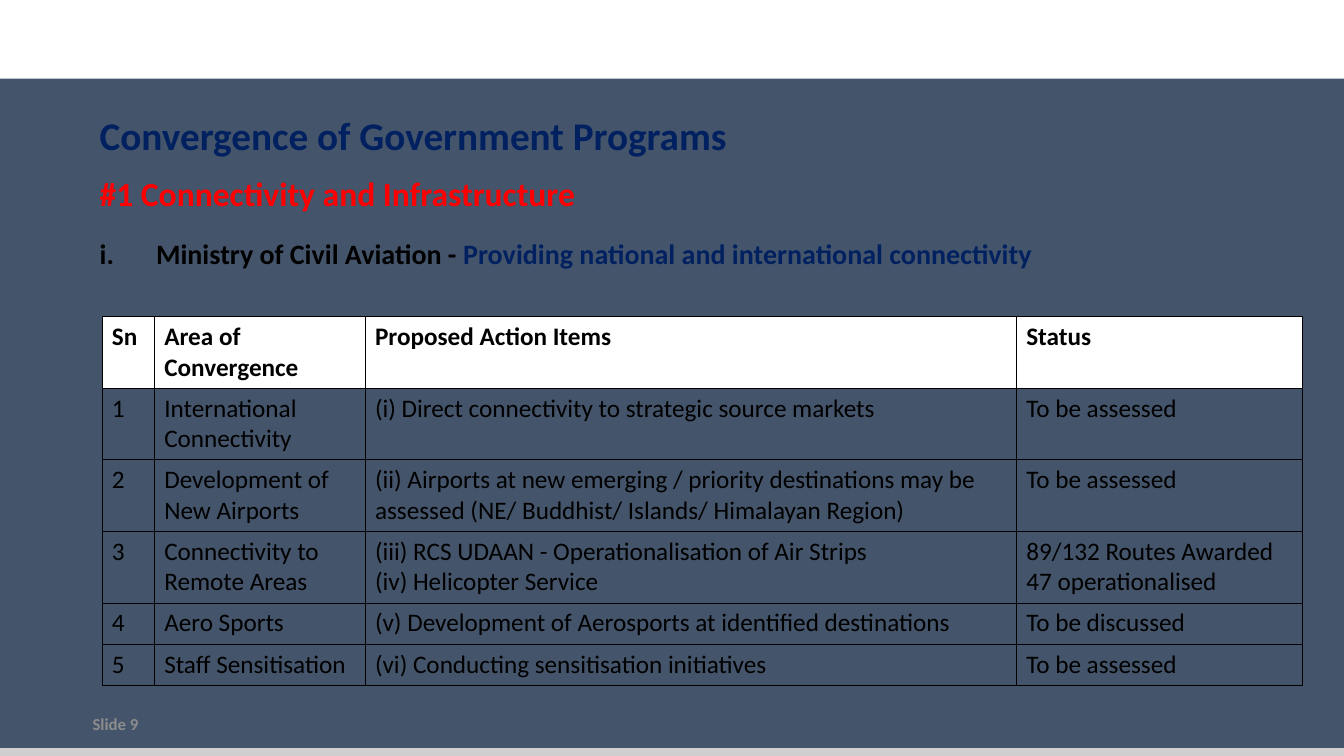
from lxml import etree
from pptx import Presentation
from pptx import util as u
from pptx.dml import color
from pptx.enum import shapes, text
from pptx.oxml import ns

BLACK, WHITE, NAVY, RED = "000000", "FFFFFF", "002060", "FF0000"
SLATE, SILVER, GREY = "44546A", "D0CECE", "8C8C8C"

COLUMN_WIDTHS = [0.52, 2.09, 6.46, 2.84]
LINE_HEIGHTS = {1: 0.41, 2: 0.71}
HEADINGS = ["Sn", "Area of Convergence", "Proposed Action Items", "Status"]
# Each entry: lines of text in the row, then its cells
ACTIONS = [
    (2, "International Connectivity",
     "(i) Direct connectivity to strategic source markets", "To be assessed"),
    (2, "Development of New Airports",
     "(ii) Airports at new emerging / priority destinations may be assessed "
     "(NE/ Buddhist/ Islands/ Himalayan Region)", "To be assessed"),
    (2, "Connectivity to Remote Areas",
     "(iii) RCS UDAAN - Operationalisation of Air Strips\n(iv) Helicopter Service",
     "89/132 Routes Awarded\n47 operationalised"),
    (1, "Aero Sports",
     "(v) Development of Aerosports at identified destinations", "To be discussed"),
    (1, "Staff Sensitisation",
     "(vi) Conducting sensitisation initiatives", "To be assessed"),
]


def rgb(value):
    return color.RGBColor.from_string(value)


def add_xml(parent, tag, **attributes):
    return etree.SubElement(parent, ns.qn(tag), attributes)


def style(font, size, hex_color, bold=True):
    settings = {"name": "Calibri", "size": u.Pt(size), "bold": bold}
    for name, value in settings.items():
        setattr(font, name, value)
    font.color.rgb = rgb(hex_color)


def text_line(slide, box, runs, size, anchor=text.MSO_ANCHOR.MIDDLE):
    """Place one line of (wording, colour) runs and return its paragraph."""
    frame = slide.shapes.add_textbox(*map(u.Inches, box)).text_frame
    frame.word_wrap = True
    frame.vertical_anchor = anchor
    line = frame.paragraphs[0]
    for wording, hex_color in runs:
        run = line.add_run()
        run.text = wording
        style(run.font, size, hex_color)
    return line


def backdrop(slide, width, height):
    background = slide.background.fill
    background.solid()
    background.fore_color.rgb = rgb(SLATE)

    # White band along the top
    band = slide.shapes.add_shape(
        shapes.MSO_SHAPE.RECTANGLE, 0, 0, u.Inches(width), u.Inches(0.78))
    band.shadow.inherit = False
    band.fill.solid()
    band.fill.fore_color.rgb = rgb(WHITE)
    band.line.fill.background()

    # Rule along the bottom
    level = u.Inches(height - 0.04)
    rule = slide.shapes.add_connector(
        shapes.MSO_CONNECTOR.STRAIGHT, 0, level, u.Inches(width), level)
    rule.line.width = u.Pt(6)
    rule.line.color.rgb = rgb(SILVER)
    add_xml(rule._element.spPr, "a:effectLst")

    text_line(slide, (0.82, height - 0.45, 3, 0.27), [("Slide 9", GREY)], 12)


def headings(slide, left, top, width):
    text_line(slide, (left, top, 8.32, 0.65),
              [("Convergence of Government Programs", NAVY)], 28)
    text_line(slide, (left, top + 0.64, width, 0.54),
              [("#1 Connectivity and Infrastructure", RED)], 24)
    ministry = text_line(
        slide, (left, top + 1.29, width, 0.5),
        [("Ministry of Civil Aviation - ", BLACK),
         ("Providing national and international connectivity", NAVY)],
        20, text.MSO_ANCHOR.TOP)

    # Roman numbering with a hanging indent
    numbering = ministry._p.get_or_add_pPr()
    indent = u.Inches(0.56)
    numbering.set("marL", str(indent))
    numbering.set("indent", str(-indent))
    add_xml(numbering, "a:buFont", typeface="+mj-lt")
    add_xml(numbering, "a:buAutoNum", type="romanLcPeriod")


def fill_cell(cell, wording, is_heading):
    # Thin borders come before the fill in the cell properties
    properties = cell._tc.get_or_add_tcPr()
    for side in ("a:lnL", "a:lnR", "a:lnT", "a:lnB"):
        border = add_xml(properties, side, w=str(u.Pt(0.25)))
        add_xml(add_xml(border, "a:solidFill"), "a:srgbClr", val=BLACK)
    if is_heading:
        cell.fill.solid()
        cell.fill.fore_color.rgb = rgb(WHITE)
    else:
        cell.fill.background()

    cell.text = wording
    for paragraph in cell.text_frame.paragraphs:
        for run in paragraph.runs:
            style(run.font, 18, BLACK, is_heading)


def action_table(slide, left, top):
    rows = [(2, HEADINGS)]
    rows += [(lines, [str(number), *cells])
             for number, (lines, *cells) in enumerate(ACTIONS, 1)]
    heights = [LINE_HEIGHTS[lines] for lines, _ in rows]
    box = (left, top, sum(COLUMN_WIDTHS), sum(heights))
    actions = slide.shapes.add_table(
        len(rows), len(COLUMN_WIDTHS), *map(u.Inches, box)).table
    actions.first_row = True
    actions.horz_banding = False

    for column, width in zip(actions.columns, COLUMN_WIDTHS):
        column.width = u.Inches(width)
    for index, (_, wordings) in enumerate(rows):
        actions.rows[index].height = u.Inches(heights[index])
        for cell, wording in zip(actions.rows[index].cells, wordings):
            fill_cell(cell, wording, index == 0)


def main():
    width, height = 13.33, 7.5
    deck = Presentation()
    deck.slide_width, deck.slide_height = u.Inches(width), u.Inches(height)
    slide = deck.slides.add_slide(deck.slide_layouts[6])
    backdrop(slide, width, height)
    headings(slide, 0.89, 1.01, 11.8)
    action_table(slide, 1.01, 3.14)
    deck.save("out.pptx")


if __name__ == "__main__":
    main()
